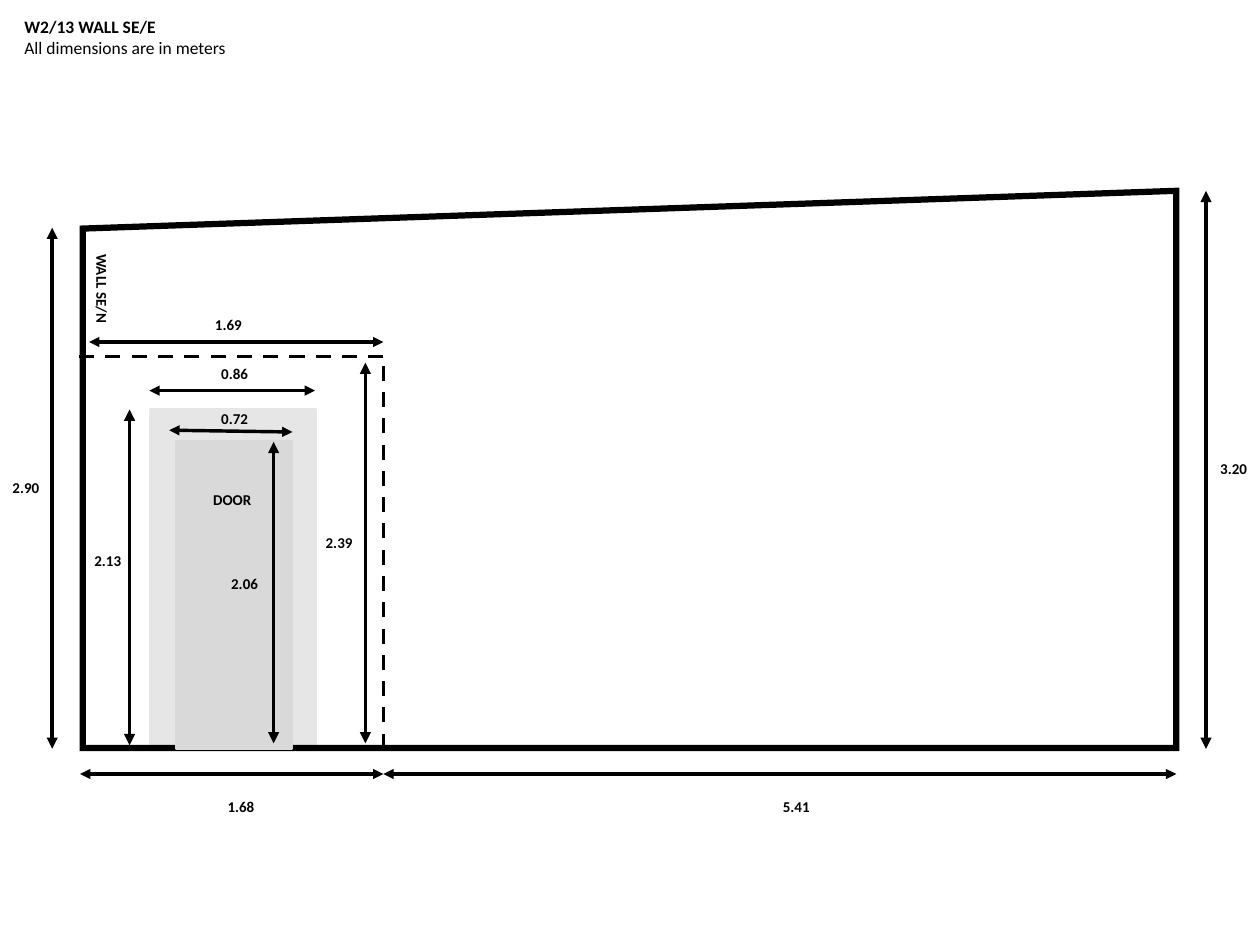
from lxml import etree
from pptx import Presentation
from pptx.dml.color import RGBColor
from pptx.enum.dml import MSO_LINE
from pptx.enum.shapes import MSO_CONNECTOR, MSO_SHAPE
from pptx.enum.text import MSO_ANCHOR, MSO_AUTO_SIZE, PP_ALIGN
from pptx.oxml.ns import qn
from pptx.util import Inches, Pt

LINE, RECT, DASH = MSO_CONNECTOR.STRAIGHT, MSO_SHAPE.RECTANGLE, MSO_LINE.DASH
TOP, LEFT, NO_FIT = MSO_ANCHOR.TOP, PP_ALIGN.LEFT, MSO_AUTO_SIZE.NONE

THEME = {
    "font": "Calibri", "ink": "000000", "frame": "E7E6E6", "leaf": "D9D9D9",
    "head": 14, "label": 12, "wall": 5, "edge": 3, "thin": 2.75,
}

# Content: places in inches
HEAD = ["W2/13 WALL SE/E", "All dimensions are in meters"]
WALL = [(13.07, 2.12), (13.07, 8.31), (0.92, 8.31), (0.92, 2.54)]
FRAME = (1.68, 4.55, 1.82, 3.76)
LEAF = (1.96, 4.91, 1.28, 3.4)
DASHES = [((4.26, 8.32), (4.26, 3.98)), ((4.26, 3.96), (0.88, 3.96))]
# Each dimension: value, arrow start, arrow end, left and top of its label
SIZES = [
    ("5.41", (4.26, 8.6), (13.07, 8.6), (8.6, 8.81)),
    ("1.68", (0.89, 8.6), (4.26, 8.6), (2.43, 8.81)),
    ("2.90", (0.58, 2.53), (0.58, 8.32), (0.04, 5.27)),
    ("3.20", (13.4, 2.12), (13.4, 8.32), (13.46, 5.06)),
    ("2.39", (4.06, 4.03), (4.06, 8.26), (3.52, 5.88)),
    ("2.13", (1.44, 4.55), (1.44, 8.28), (0.95, 6.08)),
    ("2.06", (3.04, 4.91), (3.04, 8.26), (2.47, 6.33)),
    ("0.86", (1.66, 4.34), (3.5, 4.34), (2.36, 4)),
    ("0.72", (1.88, 4.78), (3.25, 4.8), (2.36, 4.5)),
    ("1.69", (0.99, 3.8), (4.26, 3.8), (2.29, 3.46)),
]

deck = Presentation()
deck.slide_width, deck.slide_height = Inches(14), Inches(10.5)
slide = deck.slides.add_slide(deck.slide_layouts[5])
shapes = slide.shapes


def paint(line, color, width):
    line.color.rgb = RGBColor.from_string(THEME[color])
    line.width = Pt(THEME[width])


def write(text, at, shape=None, size="label", wrap=False, turn=0):
    """Set lines of text, the first one bold, in a new box or a given shape."""
    spot = [Inches(v) for v in at]
    shape = shape or shapes.add_textbox(*spot)
    shape.left, shape.top, shape.width, shape.height = spot
    shape.rotation = turn
    frame = shape.text_frame
    frame.word_wrap, frame.auto_size = wrap, NO_FIT
    frame.vertical_anchor = TOP
    frame.text = "\n".join(text)
    for i, par in enumerate(frame.paragraphs):
        par.alignment = LEFT
        font = par.runs[0].font
        font.name, font.size, font.bold = THEME["font"], Pt(THEME[size]), i == 0
        font.color.rgb = RGBColor.from_string(THEME["ink"])


def block(at, color):
    rect = shapes.add_shape(RECT, *[Inches(v) for v in at])
    rect.shadow.inherit = False
    rect.fill.solid()
    rect.fill.fore_color.rgb = RGBColor.from_string(THEME[color])
    paint(rect.line, color, "edge")


def rule(start, end, width="edge", dash=None, arrows=False):
    link = shapes.add_connector(LINE, *[Inches(v) for v in start + end])
    paint(link.line, "ink", width)
    if dash:
        link.line.dash_style = dash
    props = link.element.spPr
    if arrows:
        for tip in ("a:headEnd", "a:tailEnd"):
            etree.SubElement(props.find(qn("a:ln")), qn(tip), type="triangle")
    etree.SubElement(props, qn("a:effectLst"))


# Heading
write(HEAD, (0.17, 0.13, 2.5, 0.57), shape=shapes.title, size="head", wrap=True)

# Door frame, wall outline with sharp corners, door leaf
block(FRAME, "frame")
points = [(Inches(x), Inches(y)) for x, y in WALL]
pen = shapes.build_freeform(*points[0])
pen.add_line_segments(points[1:], close=True)
wall = pen.convert_to_shape()
wall.shadow.inherit = False
wall.fill.background()
paint(wall.line, "ink", "wall")
etree.SubElement(wall.element.spPr.find(qn("a:ln")), qn("a:miter"), lim="800000")
block(LEAF, "leaf")

# Dashed opening
for start, end in DASHES:
    rule(start, end, dash=DASH)

# Dimensions: upright arrows are a little heavier
for value, start, end, spot in SIZES:
    upright = start[0] == end[0]
    rule(start, end, width="edge" if upright else "thin", arrows=True)
    write([value], spot + (0.51, 0.3))

# Names
write(["WALL SE/N"], (0.61, 3.1, 1.05, 0.3), wrap=True, turn=90)
write(["DOOR"], (2.27, 5.4, 0.63, 0.3))

deck.save("out.pptx")
